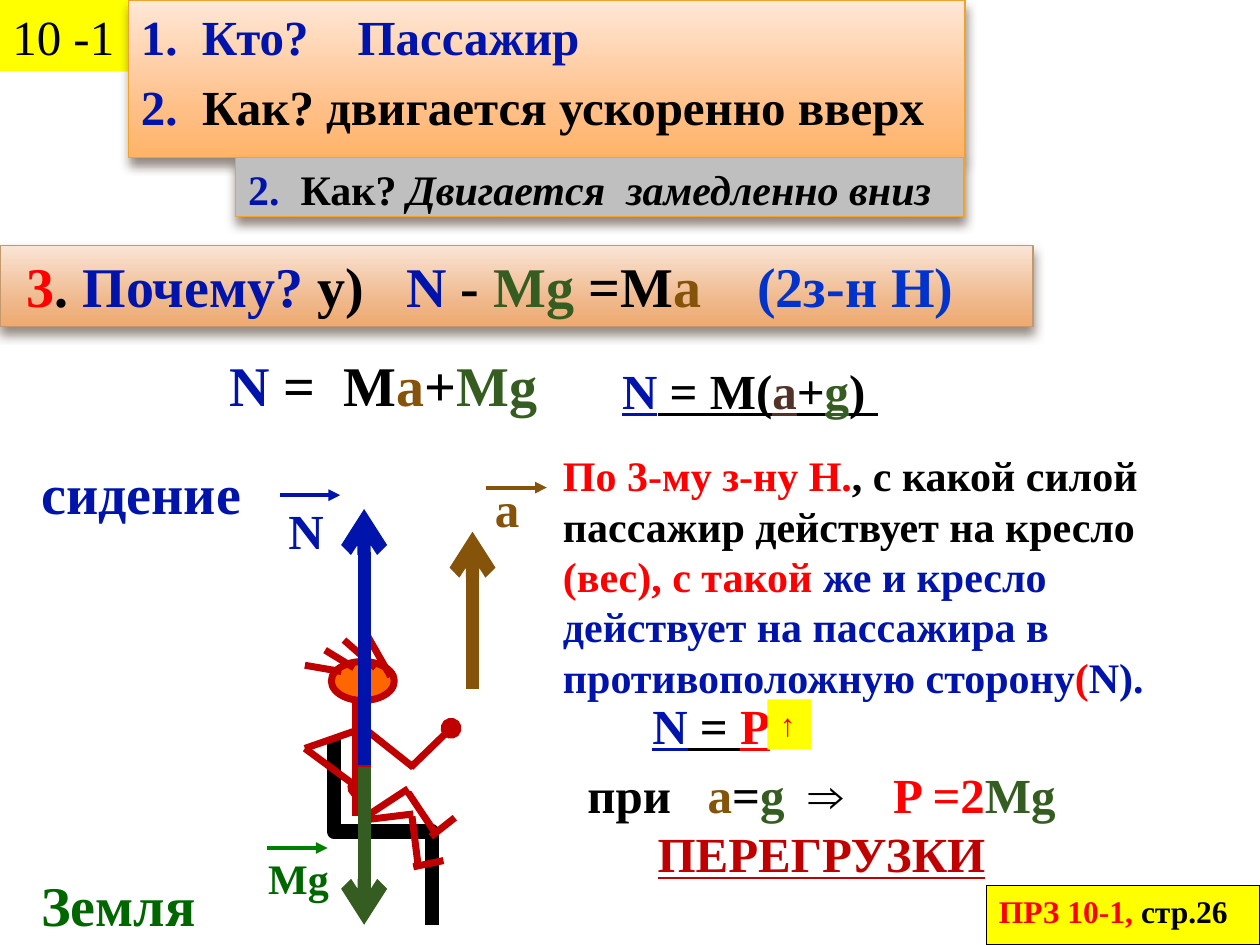
from lxml.etree import SubElement
from pptx import Presentation
from pptx.dml.color import RGBColor
from pptx.enum.shapes import MSO_CONNECTOR, MSO_SHAPE
from pptx.enum.text import MSO_ANCHOR, PP_ALIGN
from pptx.oxml.ns import qn
from pptx.util import Inches, Pt

BLACK, BLUE, RED, CRIMSON = "000000", "0014AC", "FF0000", "C00000"
GREEN, LEAF, BROWN, YELLOW = "006600", "365D21", "85540A", "FFFF00"


def colour(value):
    return RGBColor.from_string(value)


def add_run(para, text, tone, size, style):
    span = para.add_run()
    span.text = text
    span.font.name = "Times New Roman"
    span.font.size = Pt(size)
    span.font.color.rgb = colour(tone)
    span.font.bold = "b" in style
    span.font.italic = "i" in style
    span.font.underline = "u" in style


def write(box, paras, size, style="b", hanging=False, before=0, align=PP_ALIGN.LEFT, wrap=True):
    frame = box.text_frame
    frame.word_wrap = wrap
    frame.vertical_anchor = MSO_ANCHOR.TOP
    for index, runs in enumerate(paras):
        para = frame.add_paragraph() if index else frame.paragraphs[0]
        para.alignment = align
        para.space_before = Pt(before)
        if hanging:
            properties = para._p.get_or_add_pPr()
            properties.set("marL", str(Inches(0.56)))
            properties.set("indent", str(Inches(-0.56)))
        for text, tone, *extra in runs:
            add_run(para, text, tone, size, style + "".join(extra))


def label(parent, left, top, width, height, paras, size, **options):
    box = parent.shapes.add_textbox(Inches(left), Inches(top), Inches(width), Inches(height))
    write(box, paras, size, **options)


def panel(page, left, top, width, height, fill, edge=None, weight=0.79):
    box = page.shapes.add_shape(
        MSO_SHAPE.RECTANGLE, Inches(left), Inches(top), Inches(width), Inches(height))
    box.shadow.inherit = False
    if isinstance(fill, str):
        box.fill.solid()
        box.fill.fore_color.rgb = colour(fill)
    else:
        shade(box, fill)
    if edge:
        box.line.color.rgb = colour(edge)
        box.line.width = Pt(weight)
    else:
        box.line.fill.background()
    return box


def shade(box, tones):
    box.fill.gradient()
    box.fill.gradient_angle = 270
    stops = box._element.spPr.find(".//" + qn("a:gsLst"))
    for stop in list(stops):
        stops.remove(stop)
    for position, tone in zip((0, 72, 100), tones):
        stop = SubElement(stops, qn("a:gs"), pos=str(position * 1000))
        SubElement(stop, qn("a:srgbClr"), val=tone)


def cast_shadow(box):
    effects = box._element.spPr.find(qn("a:effectLst"))
    shadow = SubElement(effects, qn("a:outerShdw"), blurRad=str(Pt(6)), dist=str(Pt(4)),
                        dir="5400000", rotWithShape="0")
    tone = SubElement(shadow, qn("a:srgbClr"), val="4E3B30")
    SubElement(tone, qn("a:alpha"), val="60000")


def line(parent, start, end, tone, weight, tip=None, kind=MSO_CONNECTOR.STRAIGHT):
    link = parent.shapes.add_connector(kind, *map(Inches, start + end))
    link.line.color.rgb = colour(tone)
    link.line.width = Pt(weight)
    if tip:
        SubElement(link.line._get_or_add_ln(), qn("a:tailEnd"), type=tip)
    SubElement(link._element.spPr, qn("a:effectLst"))
    return link


def heading(page, left, top):
    number = panel(page, left, top, 1.07, 0.57, YELLOW)
    write(number, [[("10 -1", BLACK)]], 28, style="")
    question = panel(page, left + 1.02, top, 6.64, 1.25, ("FFE7D7", "FFBE84", "FFB468"), "F0A22E")
    cast_shadow(question)
    write(question, [
        [("1.  Кто?    Пассажир", BLUE)],
        [("2.  ", BLUE), ("Как? двигается ускоренно вверх", BLACK)],
    ], 28, hanging=True, before=6.5)
    variant = panel(page, left + 1.87, top + 1.25, 5.78, 0.47, "BFBFBF", "F0A22E")
    cast_shadow(variant)
    write(variant, [[("2.  ", BLUE), ("Как?", BLACK), (" Двигается  замедленно вниз", BLACK, "i")]],
          24, hanging=True, before=5.5)


def equations(page, left, top):
    law = panel(page, left, top, 8.2, 0.64, ("FAE4D5", "EFB688", "EFAA6F"), "C3986D")
    cast_shadow(law)
    write(law, [[
        (" 3", RED), (". ", BLACK), ("Почему? ", BLUE), ("y)   ", BLACK), ("N", BLUE),
        (" - ", BLACK), ("Mg", LEAF), (" =M", BLACK), ("a    ", BROWN), ("(2з-н Н)", "0033CC"),
    ]], 32, hanging=True)
    label(page, left + 1.72, top + 0.78, 2.81, 0.64, [[
        ("N", BLUE), (" =  M", BLACK), ("a", BROWN), ("+", BLACK), ("Mg", LEAF)]], 32)
    label(page, left + 4.84, top + 0.86, 2.5, 0.57, [[
        ("N", BLUE), (" = M(", BLACK), ("a", "523227"), ("+", BLACK), ("g", LEAF), (") ", BLACK),
    ]], 28, style="bu")


def passenger(page, left, top):
    person = page.shapes.add_group_shape()
    head = person.shapes.add_shape(
        MSO_SHAPE.OVAL, Inches(left + 0.21), Inches(top + 0.25), Inches(0.5), Inches(0.31))
    head.shadow.inherit = False
    head.fill.solid()
    head.fill.fore_color.rgb = colour("FF6600")
    head.line.color.rgb = colour(CRIMSON)
    head.line.width = Pt(4)
    strokes = [
        (0.45, 0.53, 0.45, 1.48, 10.5, None),
        (0.84, 1.09, 1.16, 0.78, 4, "oval"),
        (0.43, 0.79, 0, 0.94, 4, None),
        (0, 0.94, 0.42, 1.25, 4, "oval"),
        (0.47, 0.78, 0.86, 1.09, 4, None),
        (0, 0.28, 0.29, 0.33, 4, None),
        (0.16, 0.16, 0.39, 0.3, 4, None),
        (0.31, 0.08, 0.56, 0.3, 4, None),
        (0.47, 0, 0.68, 0.37, 4, None),
        (0.45, 1.51, 0.86, 1.46, 4, None),
        (0.85, 1.48, 0.9, 1.88, 4, None),
        (1.1, 1.83, 0.86, 1.88, 4, None),
        (0.47, 1.49, 0.82, 1.26, 4, None),
        (0.82, 1.29, 1.04, 1.62, 4, None),
        (1.19, 1.49, 1, 1.64, 4, None),
    ]
    for x1, y1, x2, y2, weight, tip in strokes:
        line(person, (left + x1, top + y1), (left + x2, top + y2), CRIMSON, weight, tip)


def vector_label(page, left, top, height, text, size, tone, arrow_tone, shift, drop):
    group = page.shapes.add_group_shape()
    label(group, left, top, 0.78, height, [[(text, tone)]], size)
    start = left + shift
    line(group, (start, top + drop), (start + 0.48, top + drop), arrow_tone, 2.25, "triangle")


def scene(page, left, top):
    seat = line(page, (left + 3.55, top + 2.62), (left + 2.07, top + 3.4), BLACK, 8.25,
                kind=MSO_CONNECTOR.ELBOW)
    seat._element.spPr.find(qn("a:xfrm")).set("rot", "16200000")
    passenger(page, left + 2.19, top + 1.41)
    for x, start, end, tone in [
        (2.66, 2.5, 3.75, LEAF), (2.66, 2.48, 0.45, BLUE), (3.52, 1.88, 0.63, BROWN),
    ]:
        line(page, (left + x, top + start), (left + x, top + end), tone, 7.5, "arrow")
    vector_label(page, left + 1.8, top + 3.13, 0.5, "Mg", 24, GREEN, "008000", 0.09, 0.01)
    vector_label(page, left + 1.96, top + 0.33, 0.57, "N", 28, BLUE, BLUE, 0.03, 0.01)
    vector_label(page, left + 3.6, top + 0.16, 0.57, "а", 28, BROWN, BROWN, 0.03, 0.12)
    label(page, left, top, 1.95, 0.64, [[("сидение", BLUE)]], 32)
    label(page, left, top + 3.27, 1.72, 0.64, [[("Земля", GREEN)]], 32)


def conclusion(page, left, top):
    label(page, left, top, 4.96, 2.12, [[
        ("По 3-му з-ну Н.", RED), (", с какой силой пассажир действует на кресло ", BLACK),
        ("(вес), с такой ", RED),
        ("же и кресло действует на пассажира в противоположную сторону", BLUE),
        ("(", RED), ("N).", BLUE),
    ]], 24)
    label(page, left + 0.71, top + 1.95, 1.17, 0.57,
          [[("N", BLUE), (" = ", BLACK), ("P", RED)]], 28, style="bu")
    growth = panel(page, left + 1.72, top + 2.03, 0.35, 0.4, YELLOW)
    write(growth, [[("↑", RED)]], 18, wrap=False)
    label(page, left, top + 2.5, 4.3, 1.04, [
        [("при   ", BLACK), ("a", BROWN), ("=", BLACK), ("g  ", LEAF), ("⇒    ", BLACK),
         ("P =2", RED), ("Mg", LEAF)],
        [("ПЕРЕГРУЗКИ", CRIMSON, "u")],
    ], 28, align=PP_ALIGN.CENTER)


def homework(page, left, top):
    note = panel(page, left, top, 2.17, 0.47, YELLOW, BLACK, 0.75)
    write(note, [[("ПРЗ 10-1, ", RED), ("стр.26", BLACK)]], 18)


def main():
    deck = Presentation()
    deck.slide_width, deck.slide_height = Inches(10), Inches(7.5)
    page = deck.slides.add_slide(deck.slide_layouts[6])
    heading(page, 0, 0)
    scene(page, 0.23, 3.59)
    equations(page, 0, 1.95)
    conclusion(page, 4.37, 3.52)
    homework(page, 7.83, 7.03)
    deck.save("out.pptx")


if __name__ == "__main__":
    main()
